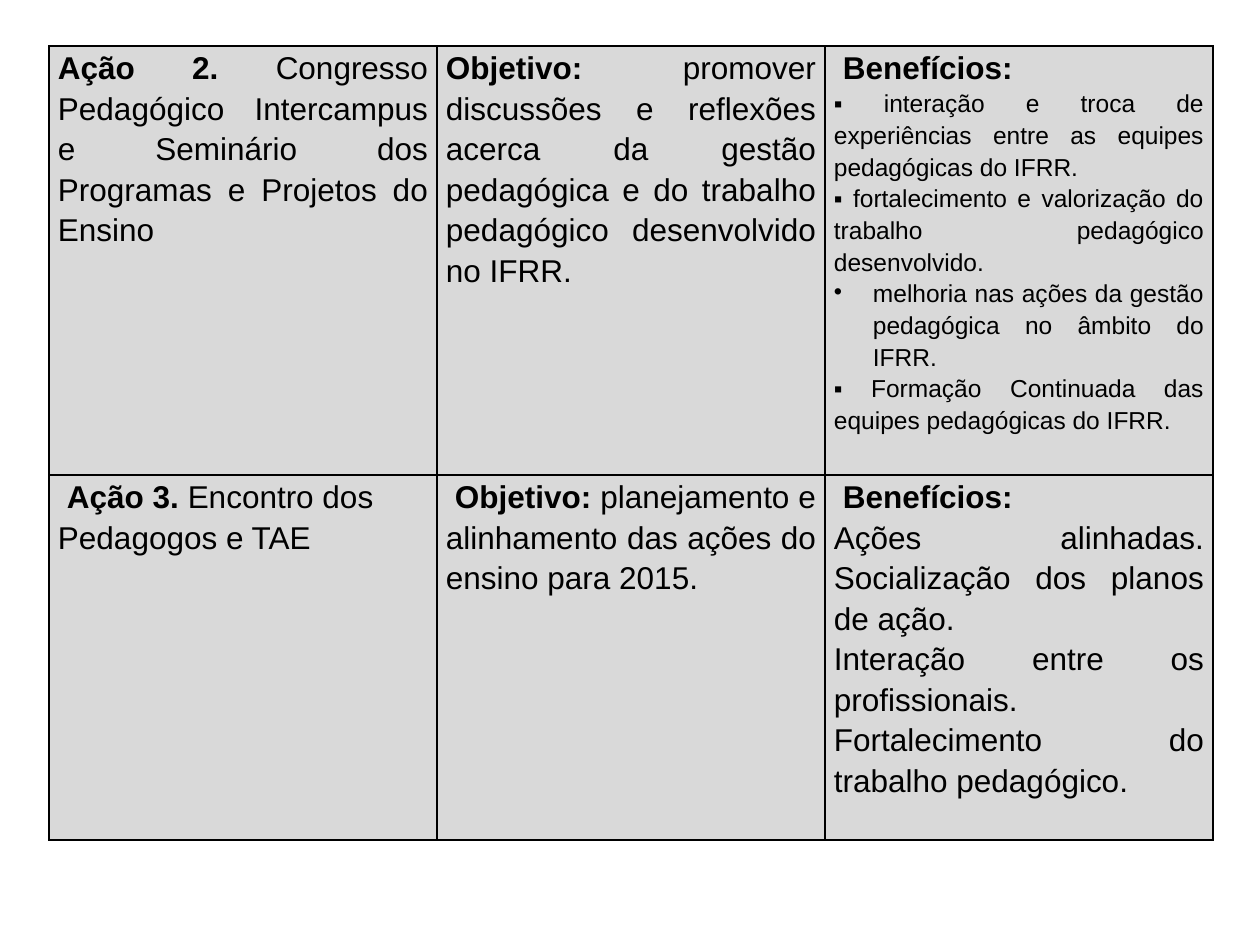
from dataclasses import dataclass

from lxml.etree import SubElement
from pptx import Presentation
from pptx.dml.color import RGBColor
from pptx.enum.text import PP_ALIGN
from pptx.oxml.ns import qn
from pptx.util import Pt

PX = 914400 // 126


@dataclass(frozen=True)
class Theme:
    font: str = "Arial"
    ink: str = "000000"
    cell: str = "D9D9D9"
    body: int = 18
    small: int = 14
    border: int = 1
    spacing: float = 1.15


theme = Theme()


def write(frame, text, lead="", size=theme.body, justify=True, margin=0, indent=0, bullet=""):
    """Add a paragraph with a bold lead before its text; margin and indent are in px."""
    paragraph = frame.paragraphs[0]
    if paragraph.runs:
        paragraph = frame.add_paragraph()
    paragraph.alignment = PP_ALIGN.JUSTIFY if justify else PP_ALIGN.LEFT
    paragraph.line_spacing = theme.spacing
    properties = paragraph._p.get_or_add_pPr()
    properties.set("marL", str(margin * PX))
    properties.set("indent", str(indent * PX))
    if bullet:
        SubElement(properties, qn("a:buChar"), char=bullet)
    for words, bold in ((lead, True), (text, False)):
        if words:
            run = paragraph.add_run()
            run.text = words
            run.font.name = theme.font
            run.font.size = Pt(size)
            run.font.bold = bold
            run.font.color.rgb = RGBColor.from_string(theme.ink)


def add_borders(cell):
    properties = cell._tc.get_or_add_tcPr()
    for side in ("lnL", "lnR", "lnT", "lnB"):
        line = SubElement(properties, qn(f"a:{side}"), w=str(Pt(theme.border)))
        SubElement(SubElement(line, qn("a:solidFill")), qn("a:srgbClr"), val=theme.ink)


small = dict(size=theme.small)
benefits_heading = ("", dict(lead="Benefícios:", justify=False, indent=9))

actions = [
    [
        [("Congresso Pedagógico Intercampus e Seminário dos Programas e Projetos do Ensino",
          dict(lead="Ação 2. "))],
        [("promover discussões e reflexões acerca da gestão pedagógica e do trabalho "
          "pedagógico desenvolvido no IFRR.", dict(lead="Objetivo: "))],
        [
            benefits_heading,
            ("▪ interação e troca de experiências entre as equipes pedagógicas do IFRR.", small),
            ("▪ fortalecimento e valorização do trabalho pedagógico desenvolvido.", small),
            ("melhoria nas ações da gestão pedagógica no âmbito do IFRR.",
             dict(small, margin=39, indent=-39, bullet="•")),
            ("▪ Formação Continuada das equipes pedagógicas do IFRR.", small),
        ],
    ],
    [
        [("Encontro dos Pedagogos e TAE", dict(lead="Ação 3. ", justify=False, indent=9))],
        [("planejamento e alinhamento das ações do ensino para 2015.",
          dict(lead="Objetivo: ", indent=9))],
        [
            benefits_heading,
            ("Ações alinhadas. Socialização dos planos de ação.", {}),
            ("Interação entre os profissionais.", {}),
            ("Fortalecimento do trabalho pedagógico.", {}),
        ],
    ],
]
row_heights = [429, 365]
column_width = 388

presentation = Presentation()
presentation.slide_width = 1260 * PX
presentation.slide_height = 945 * PX
slide = presentation.slides.add_slide(presentation.slide_layouts[6])

table = slide.shapes.add_table(
    len(actions), 3, 49 * PX, 46 * PX, 3 * column_width * PX, sum(row_heights) * PX
).table
table.first_row = False
table.horz_banding = False
for column in table.columns:
    column.width = column_width * PX

for row, height, action in zip(table.rows, row_heights, actions):
    row.height = height * PX
    for cell, paragraphs in zip(row.cells, action):
        cell.margin_left = cell.margin_right = 9 * PX
        cell.margin_top = cell.margin_bottom = 0
        add_borders(cell)
        cell.fill.solid()
        cell.fill.fore_color.rgb = RGBColor.from_string(theme.cell)
        for text, style in paragraphs:
            write(cell.text_frame, text, **style)

presentation.save("out.pptx")
